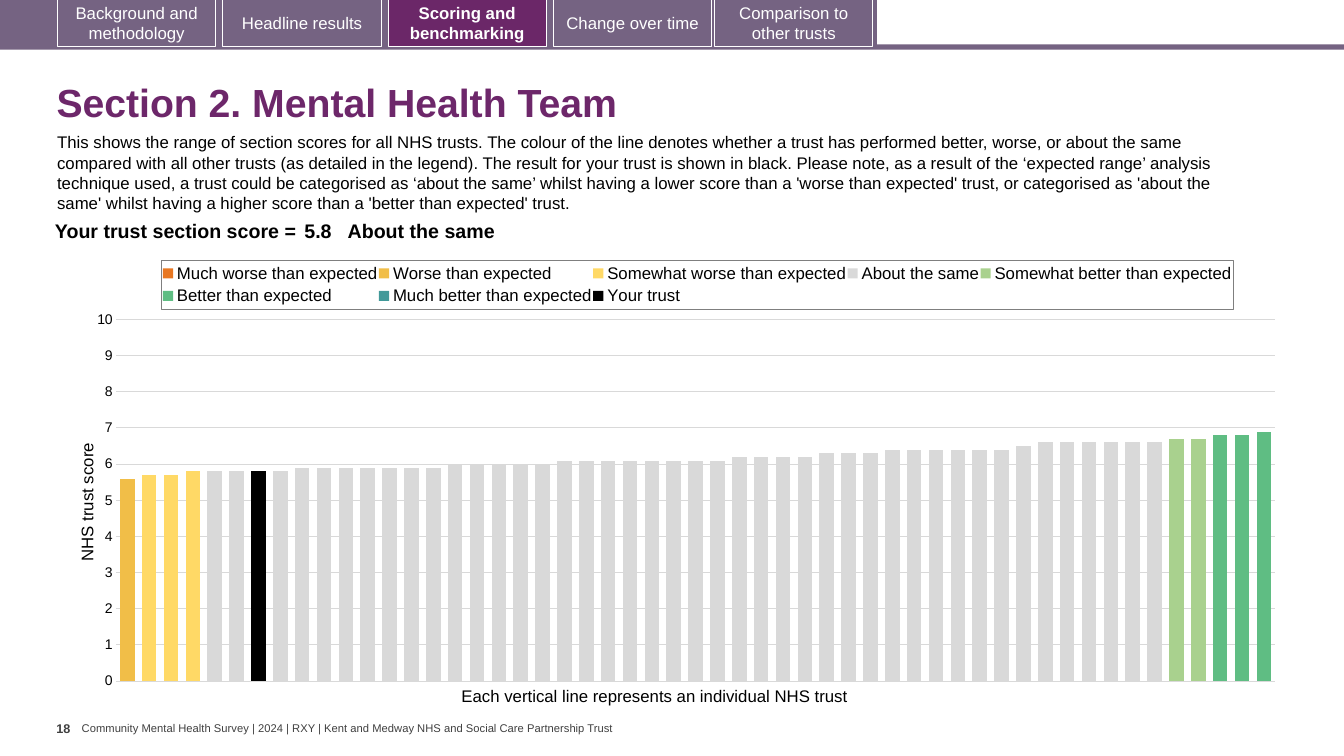
from copy import deepcopy

from pptx import Presentation
from pptx.chart.data import CategoryChartData
from pptx.dml.color import RGBColor
from pptx.enum.chart import XL_CHART_TYPE, XL_LEGEND_POSITION, XL_TICK_LABEL_POSITION, XL_TICK_MARK
from pptx.enum.shapes import MSO_SHAPE
from pptx.enum.text import MSO_ANCHOR, MSO_AUTO_SIZE, PP_ALIGN
from pptx.oxml import parse_xml
from pptx.oxml.ns import nsdecls, qn
from pptx.util import Cm, Pt

CLUSTERED = XL_CHART_TYPE.COLUMN_CLUSTERED
TOP = XL_LEGEND_POSITION.TOP
NO_TICK = XL_TICK_MARK.NONE
NO_LABELS, NEXT_TO = XL_TICK_LABEL_POSITION.NONE, XL_TICK_LABEL_POSITION.NEXT_TO_AXIS
RECT = MSO_SHAPE.RECTANGLE
MIDDLE, ANCHOR_TOP = MSO_ANCHOR.MIDDLE, MSO_ANCHOR.TOP
NO_FIT = MSO_AUTO_SIZE.NONE
LEFT, CENTER, RIGHT = PP_ALIGN.LEFT, PP_ALIGN.CENTER, PP_ALIGN.RIGHT

BLACK = RGBColor(0x00, 0x00, 0x00)
WHITE = RGBColor(0xFF, 0xFF, 0xFF)
DARK_GREY = RGBColor(0x40, 0x40, 0x40)
GRID_GREY = RGBColor(0xD9, 0xD9, 0xD9)
MAUVE = RGBColor(0x75, 0x63, 0x82)
PLUM = RGBColor(0x6B, 0x27, 0x68)
TITLE_PLUM = RGBColor(0x6D, 0x27, 0x6A)

TABS = [
    ("Background and methodology", 1.45),
    ("Headline results", 5.62),
    ("Scoring and benchmarking", 9.78),
    ("Change over time", 13.95),
    ("Comparison to other trusts", 18.01),
]
CURRENT_TAB = "Scoring and benchmarking"
INTRO = (
    "This shows the range of section scores for all NHS trusts. The colour of the line denotes "
    "whether a trust has performed better, worse, or about the same compared with all other trusts "
    "(as detailed in the legend). The result for your trust is shown in black. Please note, as a "
    "result of the ‘expected range’ analysis technique used, a trust could be categorised as "
    "‘about the same’ whilst having a lower score than a 'worse than expected' trust, or "
    "categorised as 'about the same' whilst having a higher score than a 'better than expected' trust."
)
TRUSTS = 53
ABOUT_THE_SAME = (
    [5.8] * 4 + [5.9] * 7 + [6] * 5 + [6.1] * 8 + [6.2] * 4 + [6.3] * 3 + [6.4] * 6 + [6.5] + [6.6] * 6
)
BANDS = [
    ("Much worse than expected", RGBColor(0xE8, 0x77, 0x22), 0, []),
    ("Worse than expected", RGBColor(0xF1, 0xBE, 0x48), 0, [5.6]),
    ("Somewhat worse than expected", RGBColor(0xFF, 0xD9, 0x66), 1, [5.7, 5.7, 5.8]),
    ("About the same", GRID_GREY, 4, ABOUT_THE_SAME),
    ("Somewhat better than expected", RGBColor(0xA9, 0xD1, 0x8E), 48, [6.7, 6.7]),
    ("Better than expected", RGBColor(0x5F, 0xBD, 0x83), 50, [6.8, 6.8, 6.9]),
    ("Much better than expected", RGBColor(0x41, 0x99, 0x99), 0, []),
    ("Your trust", BLACK, 6, [5.8]),
]


def set_font(font, size, color=BLACK, bold=False, name="Arial"):
    font.name, font.size, font.bold = name, Pt(size), bold
    font.color.rgb = color


def write(tf, text, size=12, color=BLACK, bold=False, align=LEFT, spacing=None):
    p = tf.paragraphs[0]
    p.alignment = align
    p.line_spacing = spacing
    r = p.add_run()
    r.text = text
    set_font(r.font, size, color, bold)


def set_layout(parent, index, x, y, w=None, h=None, inner=False):
    for old in parent.findall(qn("c:layout")):
        parent.remove(old)
    target = '<c:layoutTarget val="inner"/>' if inner else ""
    size = f'<c:w val="{w}"/><c:h val="{h}"/>' if w else ""
    parent.insert(index, parse_xml(
        f'<c:layout {nsdecls("c")}><c:manualLayout>{target}<c:xMode val="edge"/><c:yMode val="edge"/>'
        f'<c:x val="{x}"/><c:y val="{y}"/>{size}</c:manualLayout></c:layout>'))


def move_to_second_axis(plot_area, name_index):
    bars = plot_area.find(qn("c:barChart"))
    second = deepcopy(bars)
    for i, ser in enumerate(bars.findall(qn("c:ser"))):
        if i == name_index:
            bars.remove(ser)
    for i, ser in enumerate(second.findall(qn("c:ser"))):
        if i != name_index:
            second.remove(ser)
    bars.addnext(second)
    cat, val = plot_area.find(qn("c:catAx")), plot_area.find(qn("c:valAx"))
    cat2, val2 = deepcopy(cat), deepcopy(val)
    val.addnext(val2)
    val2.addnext(cat2)
    for axis, own, other in ((cat2, "5001", "5002"), (val2, "5002", "5001")):
        axis.find(qn("c:axId")).set("val", own)
        axis.find(qn("c:crossAx")).set("val", other)
    val2.find(qn("c:crosses")).set("val", "max")
    for ref, number in zip(second.findall(qn("c:axId")), ("5001", "5002")):
        ref.set("val", number)


class Deck:
    def __init__(self):
        self.prs = Presentation()
        self.prs.slide_width, self.prs.slide_height = Cm(33.87), Cm(19.05)
        self.s = self.prs.slides.add_slide(self.prs.slide_layouts[5])

    def title(self, text, x, y, w, h):
        sp = self.s.shapes.title
        sp.left, sp.top, sp.width, sp.height = Cm(x), Cm(y), Cm(w), Cm(h)
        tf = sp.text_frame
        tf.auto_size, tf.vertical_anchor = NO_FIT, MIDDLE
        write(tf, text, size=28, color=TITLE_PLUM, bold=True, spacing=0.9)

    def rect(self, x, y, w, h, fill, line=None):
        sp = self.s.shapes.add_shape(RECT, Cm(x), Cm(y), Cm(w), Cm(h))
        sp.shadow.inherit = False
        sp.fill.solid()
        sp.fill.fore_color.rgb = fill
        if line is None:
            sp.line.fill.background()
        else:
            sp.line.color.rgb, sp.line.width = line, Pt(0.75)
        return sp

    def tab(self, text, x):
        current = text == CURRENT_TAB
        sp = self.rect(x, -0.02, 3.99, 1.19, PLUM if current else MAUVE, WHITE)
        tf = sp.text_frame
        tf.word_wrap, tf.vertical_anchor = True, MIDDLE
        write(tf, text, color=WHITE, bold=current, align=CENTER)

    def text(self, text, x, y, w, h, wrap=False, margins=(0.25, 0.13), anchor=ANCHOR_TOP, **fmt):
        tf = self.s.shapes.add_textbox(Cm(x), Cm(y), Cm(w), Cm(h)).text_frame
        tf.word_wrap, tf.vertical_anchor = wrap, anchor
        tf.margin_left = tf.margin_right = Cm(margins[0])
        tf.margin_top = tf.margin_bottom = Cm(margins[1])
        write(tf, text, **fmt)

    def score_table(self, cells, x, y, widths, h):
        table = self.s.shapes.add_table(1, len(cells), Cm(x), Cm(y), Cm(sum(widths)), Cm(h)).table
        table.first_row = table.horz_banding = False
        table.rows[0].height = Cm(h)
        for i, (text, align, side) in enumerate(cells):
            table.columns[i].width = Cm(widths[i])
            cell = table.cell(0, i)
            cell.fill.background()
            cell.margin_left = cell.margin_right = Cm(side)
            cell.margin_top = cell.margin_bottom = Cm(0.1)
            write(cell.text_frame, text, size=14, bold=True, align=align)

    def score_chart(self, x, y, w, h):
        data = CategoryChartData()
        data.categories = [str(n + 1) for n in range(TRUSTS)]
        for name, _, start, scores in BANDS:
            data.add_series(name, [None] * start + scores + [None] * (TRUSTS - start - len(scores)))
        chart = self.s.shapes.add_chart(CLUSTERED, Cm(x), Cm(y), Cm(w), Cm(h), data).chart
        chart.has_title = False
        set_font(chart.font, 10, name="Calibri")
        plot = chart.plots[0]
        plot.vary_by_categories, plot.gap_width, plot.overlap = False, 50, 100
        for series, band in zip(plot.series, BANDS):
            series.format.fill.solid()
            series.format.fill.fore_color.rgb = band[1]
            series.invert_if_negative = False

        chart.category_axis.visible = False
        axis = chart.value_axis
        axis.minimum_scale, axis.maximum_scale, axis.major_unit = 0, 10, 1
        axis.major_tick_mark = NO_TICK
        axis.has_major_gridlines = False
        axis.format.line.fill.background()
        axis.tick_label_position = NO_LABELS
        plot_area = plot._element.getparent()
        move_to_second_axis(plot_area, len(BANDS) - 1)
        set_layout(plot_area, 0, 0.04, 0.158, 0.946, 0.808, inner=True)

        axis.tick_label_position = NEXT_TO
        set_font(axis.tick_labels.font, 10)
        axis.has_major_gridlines = True
        grid = axis.major_gridlines.format.line
        grid.color.rgb, grid.width = GRID_GREY, Pt(0.75)
        title = axis.axis_title
        write(title.text_frame, "NHS trust score", align=CENTER)
        body = next(title._element.iter(qn("a:bodyPr")))
        body.set("rot", "-5400000")
        body.set("vert", "horz")
        set_layout(title._element, 1, 0.005, 0.427)

        chart.has_legend = True
        legend = chart.legend
        legend.position, legend.include_in_layout = TOP, False
        set_font(legend.font, 12)
        set_layout(legend._element, 1, 0.077, 0.025, 0.875, 0.11)
        legend._element.find(qn("c:overlay")).addnext(parse_xml(
            f'<c:spPr {nsdecls("c", "a")}><a:ln w="9525"><a:solidFill><a:srgbClr val="7F7F7F"/>'
            '</a:solidFill></a:ln></c:spPr>'))


def main():
    deck = Deck()
    deck.rect(0, 1.12, 33.87, 0.13, MAUVE)
    deck.rect(0, 0, 22.1, 1.19, MAUVE)
    for name, left in TABS:
        deck.tab(name, left)
    deck.title("Section 2. Mental Health Team", 1.17, 1.73, 31.72, 1.83)
    deck.text(INTRO, 1.19, 3.2, 30.81, 2.31, wrap=True)
    deck.score_chart(1.7, 6.27, 30.86, 11.28)
    deck.text("Each vertical line represents an individual NHS trust", 11.38, 17.15, 10.44, 0.76)
    deck.score_table(
        [("Your trust section score =", RIGHT, 0.1), ("5.8", LEFT, 0.1), ("About the same", LEFT, 0)],
        0.89, 5.46, [6.68, 1.19, 21.82], 0.56)
    deck.text("18", 1.42, 18.03, 0.64, 1.02, margins=(0, 0.13), size=9, color=DARK_GREY, bold=True)
    deck.text(
        "Community Mental Health Survey | 2024 | RXY | Kent and Medway NHS and Social Care Partnership Trust",
        2.06, 18.19, 13.56, 0.33, margins=(0, 0), anchor=MIDDLE, size=8, color=DARK_GREY)
    deck.prs.save("out.pptx")


if __name__ == "__main__":
    main()
